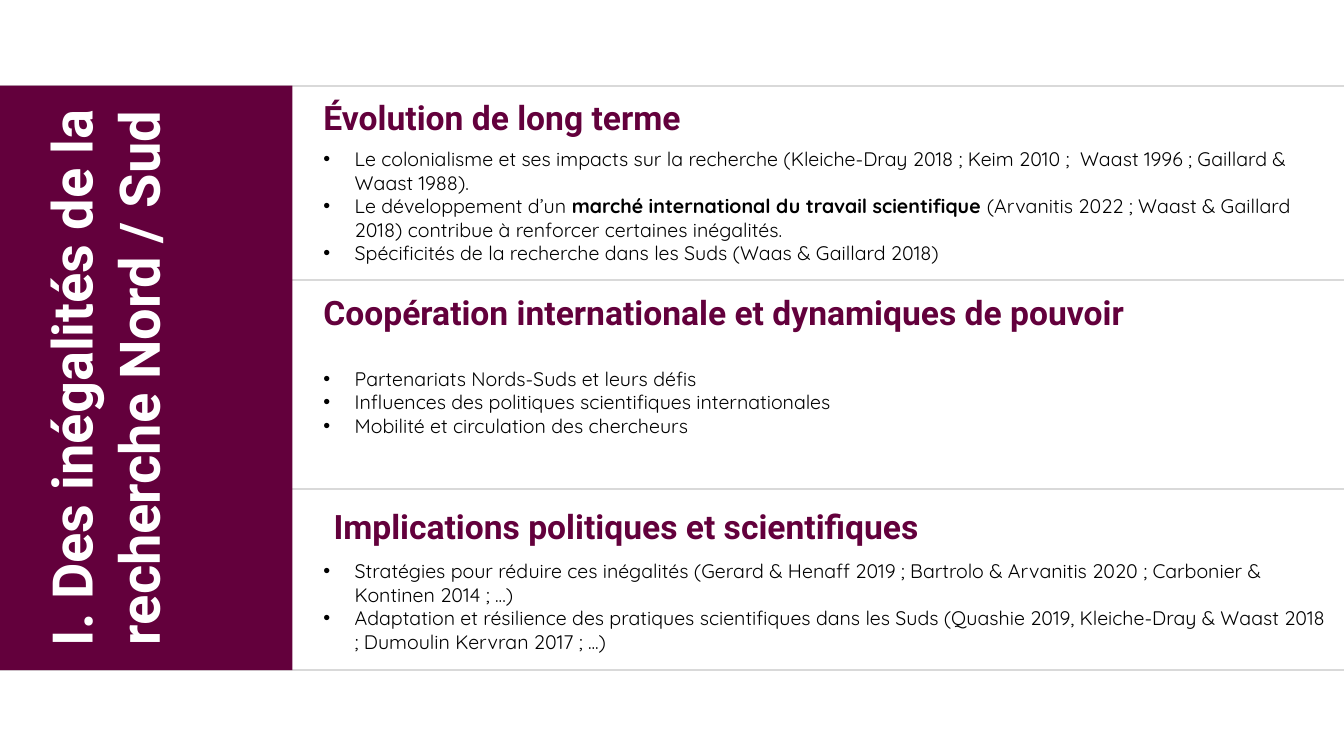
"""Build the slide on research inequalities between North and South."""
from lxml import etree
from pptx import Presentation
from pptx.dml.color import RGBColor
from pptx.enum.shapes import MSO_CONNECTOR, MSO_SHAPE
from pptx.enum.text import MSO_ANCHOR, PP_ALIGN
from pptx.oxml.ns import qn
from pptx.util import Inches, Pt

STRAIGHT = MSO_CONNECTOR.STRAIGHT
RECTANGLE = MSO_SHAPE.RECTANGLE
TOP = MSO_ANCHOR.TOP
LEFT, CENTER = PP_ALIGN.LEFT, PP_ALIGN.CENTER

COLORS = {"plum": "63003C", "rule": "D9D9D9", "white": "FFFFFF", "black": "000000"}
TITLE = {"size": Pt(40), "name": "Roboto", "bold": True}
HEADING = {"size": Pt(24), "name": "Roboto", "bold": True}
BODY = {"size": Pt(14), "name": "Quicksand", "bold": False}
STRONG = {**BODY, "bold": True}

SECTIONS = [
    {
        "heading": "Évolution de long terme",
        "heading_at": (3.11, 0.91, 9.08, 0.5),
        "bullets_at": (3.11, 1.41, 10.16, 1.51),
        "bullets": [
            [("Le colonialisme et ses impacts sur la recherche (Kleiche-Dray 2018 ; "
              "Keim 2010 ;  Waast 1996 ; Gaillard & Waast 1988).", BODY)],
            [("Le développement d’un ", BODY),
             ("marché international du travail scientifique ", STRONG),
             ("(Arvanitis 2022 ; Waast & Gaillard 2018) contribue à renforcer "
              "certaines inégalités.", BODY)],
            [("Spécificités de la recherche dans les Suds (Waas & Gaillard 2018)", BODY)],
        ],
    },
    {
        "heading": "Coopération internationale et dynamiques de pouvoir",
        "heading_at": (3.11, 2.85, 10.16, 0.98),
        "bullets_at": (3.11, 3.59, 10.16, 0.81),
        "bullets": [
            [("Partenariats Nords-Suds et leurs défis", BODY)],
            [("Influences des politiques scientifiques internationales", BODY)],
            [("Mobilité et circulation des chercheurs", BODY)],
        ],
    },
    {
        "heading": "Implications politiques et scientifiques",
        "heading_at": (3.21, 4.97, 9.83, 0.98),
        "bullets_at": (3.11, 5.5, 10.16, 1.04),
        "bullets": [
            [("Stratégies pour réduire ces inégalités (Gerard & Henaff 2019 ; "
              "Bartrolo & Arvanitis 2020 ; Carbonier & Kontinen 2014 ; ...)", BODY)],
            [("Adaptation et résilience des pratiques scientifiques dans les Suds "
              "(Quashie 2019, Kleiche-Dray & Waast 2018 ; Dumoulin Kervran 2017 ; ...)",
              BODY)],
        ],
    },
]


def add_text(page, place, paragraphs, color, align=LEFT):
    """Add a text box of paragraphs made of (text, format) spans."""
    box = page.shapes.add_textbox(*map(Inches, place))
    frame = box.text_frame
    frame.word_wrap = True
    frame.vertical_anchor = TOP
    for index, spans in enumerate(paragraphs):
        para = frame.add_paragraph() if index else frame.paragraphs[0]
        para.alignment = align
        for text, style in spans:
            span = para.add_run()
            span.text = text
            span.font.color.rgb = RGBColor.from_string(COLORS[color])
            for attribute, value in style.items():
                setattr(span.font, attribute, value)
    return box


def add_bullet(para):
    """Give a paragraph a hanging round bullet."""
    properties = para._p.get_or_add_pPr()
    properties.set("marL", str(Inches(0.31)))
    properties.set("indent", str(-Inches(0.31)))
    font = etree.SubElement(properties, qn("a:buFont"))
    font.set("typeface", "Arial")
    mark = etree.SubElement(properties, qn("a:buChar"))
    mark.set("char", "•")


deck = Presentation()
deck.slide_width = Inches(13.33)
deck.slide_height = Inches(7.5)
page = deck.slides.add_slide(deck.slide_layouts[6])

for height in (0.85, 2.78, 4.85, 6.65):
    rule = page.shapes.add_connector(
        STRAIGHT, 0, Inches(height), deck.slide_width, Inches(height))
    rule.line.color.rgb = RGBColor.from_string(COLORS["rule"])
    rule.line.width = Pt(1.5)
    etree.SubElement(rule._element.spPr, qn("a:effectLst"))

band = page.shapes.add_shape(RECTANGLE, 0, Inches(0.85), Inches(2.9), Inches(5.8))
band.shadow.inherit = False
band.fill.solid()
band.fill.fore_color.rgb = RGBColor.from_string(COLORS["plum"])
band.line.fill.background()

title = add_text(page, (-1.5, 2.69, 5.75, 2.12),
                 [[("I. Des inégalités de la recherche Nord / Sud", TITLE)]],
                 "white", CENTER)
title.rotation = 270

for section in SECTIONS:
    add_text(page, section["heading_at"], [[(section["heading"], HEADING)]], "plum")
    box = add_text(page, section["bullets_at"], section["bullets"], "black")
    for para in box.text_frame.paragraphs:
        add_bullet(para)

deck.save("out.pptx")
